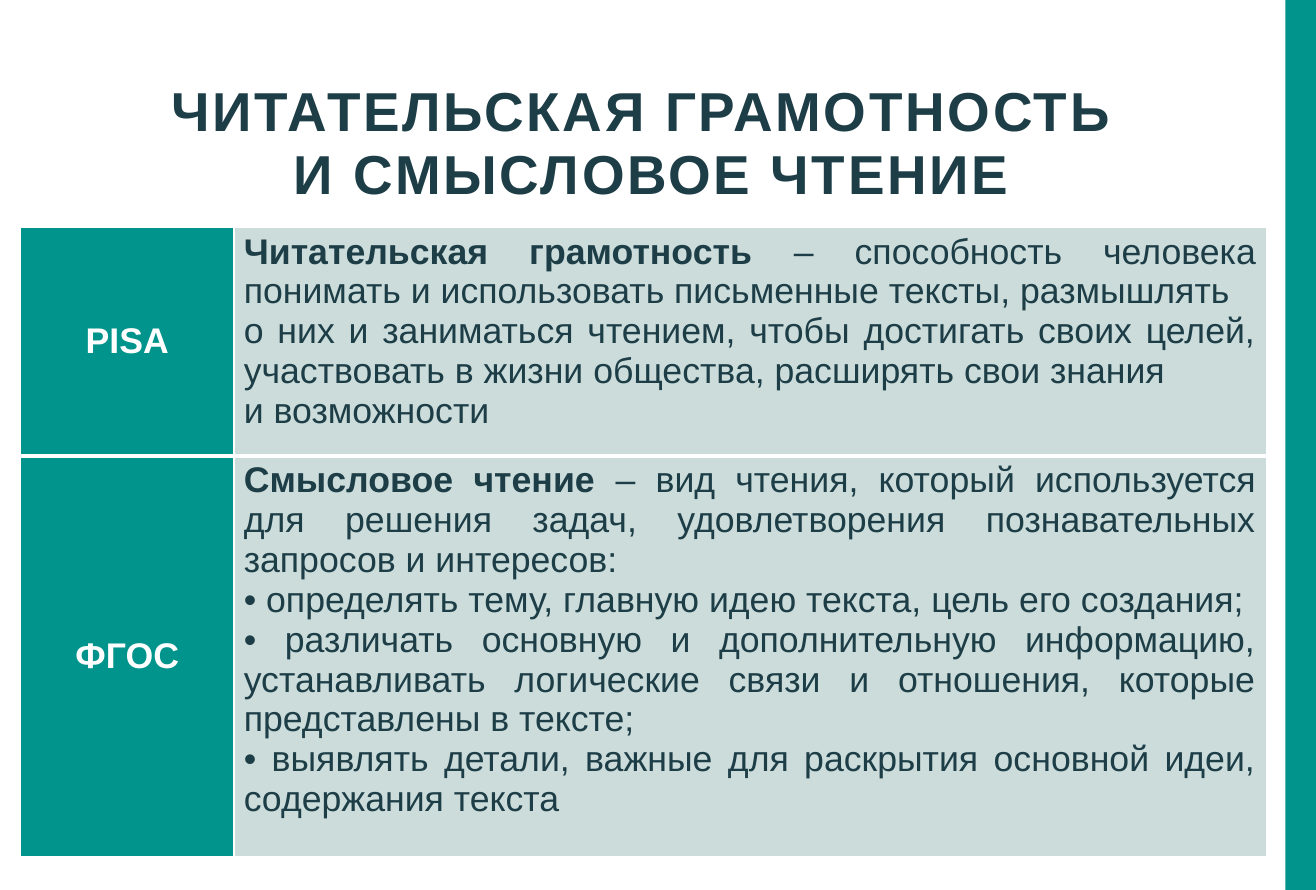
import pptx
import pptx.util
import pptx.dml.color
import pptx.enum.shapes
import pptx.enum.text
import pptx.oxml.ns
from lxml import etree

TITLE = ["ЧИТАТЕЛЬСКАЯ ГРАМОТНОСТЬ ", "И СМЫСЛОВОЕ ЧТЕНИЕ"]
# Each row: label, then paragraphs as (bulleted, bold lead, plain text)
ROWS = [
    ("PISA", [
        (False, "Читательская грамотность ",
         "– способность человека понимать и использовать письменные тексты, размышлять "),
        (False, "", "о них и заниматься чтением, чтобы достигать своих целей, "
                    "участвовать в жизни общества, расширять свои знания "),
        (False, "", "и возможности"),
    ]),
    ("ФГОС", [
        (False, "Смысловое чтение ",
         "– вид чтения, который используется для решения задач, "
         "удовлетворения познавательных запросов и интересов:"),
        (True, "", " определять тему, главную идею текста, цель его создания;"),
        (True, "", " различать основную и дополнительную информацию, устанавливать "
                   "логические связи и отношения, которые представлены в тексте; "),
        (True, "", " выявлять детали, важные для раскрытия основной идеи, содержания текста"),
    ]),
]
COLORS = {"teal": "00948C", "pale": "CBDCDB", "ink": "1D3D47", "white": "FFFFFF"}
FONT = "Arial"
TITLE_PT, BODY_PT = 40, 26

# Lengths in px, 100 px to the inch
SLIDE_W, SLIDE_H = 1333, 902
BAR_W = 31
TITLE_BOX = (41, 77, 1238, 150)
TABLE_LEFT, TABLE_TOP = 21, 230
COL_WIDTHS = [216, 1046]
ROW_HEIGHTS = [232, 406]


def px(n):
    return pptx.util.Emu(n * 9144)


def rgb(name):
    return pptx.dml.color.RGBColor.from_string(COLORS[name])


def add_run(p, text, size, color, bold):
    r = p.add_run()
    r.text = text
    r.font.name, r.font.size, r.font.bold = FONT, pptx.util.Pt(size), bold
    r.font.color.rgb = rgb(color)
    return r


def sub(parent, tag, **attrs):
    return etree.SubElement(parent, pptx.oxml.ns.qn(tag), attrs)


def style_cell(cell, fill, widths):
    """Set white borders (points by side) and the fill."""
    tcPr = cell._tc.get_or_add_tcPr()
    for side, pt in widths.items():
        ln = sub(tcPr, "a:ln" + side, w=str(pptx.util.Pt(pt)))
        sub(sub(ln, "a:solidFill"), "a:srgbClr", val=COLORS["white"])
    cell.fill.solid()
    cell.fill.fore_color.rgb = rgb(fill)


def main():
    align, anchor = pptx.enum.text.PP_ALIGN, pptx.enum.text.MSO_ANCHOR
    prs = pptx.Presentation()
    prs.slide_width, prs.slide_height = px(SLIDE_W), px(SLIDE_H)
    slide = prs.slides.add_slide(prs.slide_layouts[5])

    # Title
    sp = slide.shapes.title
    sp.left, sp.top, sp.width, sp.height = map(px, TITLE_BOX)
    tf = sp.text_frame
    tf.word_wrap = True
    tf.auto_size = pptx.enum.text.MSO_AUTO_SIZE.NONE
    tf.vertical_anchor = anchor.TOP
    p = tf.paragraphs[0]
    p.alignment, p.line_spacing = align.CENTER, 0.96
    for i, line in enumerate(TITLE):
        if i:
            p.add_line_break()
        r = add_run(p, line, TITLE_PT, "ink", True)
        r.font._element.set("spc", "200")

    # Bar at the right edge
    bar = slide.shapes.add_shape(pptx.enum.shapes.MSO_SHAPE.RECTANGLE,
                                 px(SLIDE_W - BAR_W), 0, px(BAR_W), px(SLIDE_H))
    bar.shadow.inherit = False
    bar.fill.solid()
    bar.fill.fore_color.rgb = rgb("teal")
    bar.line.fill.background()

    # Table
    table = slide.shapes.add_table(len(ROWS), len(COL_WIDTHS), px(TABLE_LEFT), px(TABLE_TOP),
                                   px(sum(COL_WIDTHS)), px(sum(ROW_HEIGHTS))).table
    table.first_row = table.horz_banding = False
    for col, width in zip(table.columns, COL_WIDTHS):
        col.width = px(width)
    for i, (label, paragraphs) in enumerate(ROWS):
        table.rows[i].height = px(ROW_HEIGHTS[i])
        widths = {"L": 1, "R": 1, "T": 3 if i else 1, "B": 1 if i else 3}
        head, body = table.cell(i, 0), table.cell(i, 1)
        style_cell(head, "teal", widths)
        style_cell(body, "pale", widths)

        head.vertical_anchor = anchor.MIDDLE
        p = head.text_frame.paragraphs[0]
        p.alignment = align.CENTER
        add_run(p, label, BODY_PT, "white", True)

        tf = body.text_frame
        for j, (bulleted, lead, text) in enumerate(paragraphs):
            p = tf.add_paragraph() if j else tf.paragraphs[0]
            p.alignment = align.JUSTIFY
            if bulleted:
                pPr = p._p.get_or_add_pPr()
                pPr.set("marL", "0")
                pPr.set("indent", "0")
                sub(pPr, "a:buFont", typeface=FONT)
                sub(pPr, "a:buChar", char="•")
            if lead:
                add_run(p, lead, BODY_PT, "ink", True)
            add_run(p, text, BODY_PT, "ink", False)

    prs.save("out.pptx")


if __name__ == "__main__":
    main()
